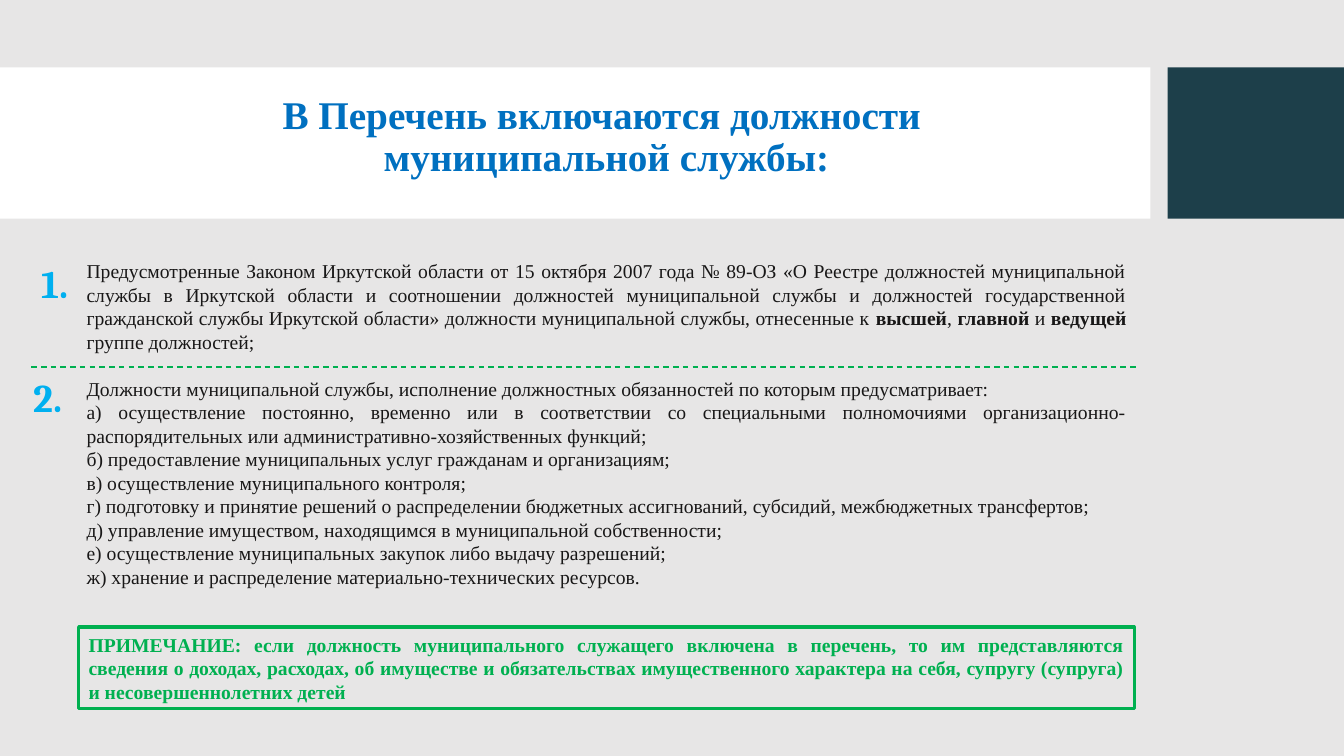
from dataclasses import dataclass
from typing import Optional

import pptx
import pptx.dml.color
import pptx.enum.dml
import pptx.enum.shapes
import pptx.enum.text
import pptx.oxml
import pptx.oxml.ns
import pptx.util

RGB = pptx.dml.color.RGBColor
ALIGN = pptx.enum.text.PP_ALIGN
ANCHOR = pptx.enum.text.MSO_ANCHOR
RECT = pptx.enum.shapes.MSO_SHAPE.RECTANGLE

GREY = RGB(0xE7, 0xE6, 0xE6)
WHITE = RGB(0xFF, 0xFF, 0xFF)
TEAL = RGB(0x1D, 0x3F, 0x4A)
BLUE = RGB(0x00, 0x70, 0xC0)
SKY = RGB(0x00, 0xB0, 0xF0)
GREEN = RGB(0x00, 0xB0, 0x50)
INK = RGB(0x18, 0x17, 0x17)

WIDTH = pptx.util.Inches(13.33)
HEIGHT = pptx.util.Inches(7.5)
SERIF = "Times New Roman"


@dataclass(frozen=True)
class Area:
    """Left, top, width and height in percent of the slide."""
    left: float
    top: float
    width: float
    height: float

    def emu(self) -> tuple[int, int, int, int]:
        return (across(self.left), down(self.top),
                across(self.width), down(self.height))


@dataclass(frozen=True)
class Panel:
    area: Area
    fill: Optional[RGB] = None
    line: Optional[RGB] = None


@dataclass(frozen=True)
class Style:
    size: int
    color: RGB
    font: str = SERIF
    bold: Optional[bool] = None
    align: Optional[ALIGN] = None
    spacing: Optional[float] = None


@dataclass(frozen=True)
class Label:
    area: Area
    lines: tuple[str, ...]
    style: Style
    wrap: bool = True
    anchor: ANCHOR = ANCHOR.TOP


def across(percent: float) -> int:
    return round(WIDTH * percent / 100)


def down(percent: float) -> int:
    return round(HEIGHT * percent / 100)


def add_panel(slide, panel: Panel):
    sp = slide.shapes.add_shape(RECT, *panel.area.emu())
    sp.shadow.inherit = False
    if panel.fill is None:
        sp.fill.background()
    else:
        sp.fill.solid()
        sp.fill.fore_color.rgb = panel.fill
    if panel.line is None:
        sp.line.fill.background()
    else:
        sp.line.color.rgb = panel.line
        sp.line.width = pptx.util.Pt(2.25)
    return sp


def write_text(tf, lines: tuple[str, ...], style: Style) -> None:
    for i, line in enumerate(lines):
        p = tf.paragraphs[0] if i == 0 else tf.add_paragraph()
        p.alignment = style.align
        p.line_spacing = style.spacing
        for j, part in enumerate(line.split("**")):
            for k, row in enumerate(part.split("\n")):
                if k:
                    p.add_line_break()
                r = p.add_run()
                r.text = row
                if j % 2:
                    r.font.bold = True
        p.font.name = style.font
        p.font.size = pptx.util.Pt(style.size)
        p.font.bold = style.bold
        p.font.color.rgb = style.color


def add_label(slide, label: Label):
    sp = slide.shapes.add_textbox(*label.area.emu())
    tf = sp.text_frame
    tf.word_wrap = label.wrap
    tf.vertical_anchor = label.anchor
    write_text(tf, label.lines, label.style)
    return sp


def add_divider(slide, left: float, right: float, top: float) -> None:
    line = slide.shapes.add_connector(
        pptx.enum.shapes.MSO_CONNECTOR.STRAIGHT,
        across(left), down(top), across(right), down(top))
    line.line.color.rgb = GREEN
    line.line.width = pptx.util.Pt(1)
    line.line.dash_style = pptx.enum.dml.MSO_LINE.DASH
    line._element.spPr.append(pptx.oxml.parse_xml(
        f'<a:effectLst {pptx.oxml.ns.nsdecls("a")}/>'))


BANDS = (
    Panel(Area(0, 8.93, 85.6, 20), WHITE),
    Panel(Area(86.87, 8.93, 13.13, 20), TEAL),
)
TITLE = Label(
    Area(5.7, 10.4, 78.85, 15.73),
    ("В Перечень включаются должности \nмуниципальной службы:",),
    Style(28, BLUE, bold=True, align=ALIGN.CENTER, spacing=0.9),
    anchor=ANCHOR.MIDDLE)
BODY = Label(
    Area(5.7, 33.6, 78.85, 45.33),
    (
        "Предусмотренные Законом Иркутской области от 15 октября 2007 года № 89-ОЗ "
        "«О Реестре должностей муниципальной службы в Иркутской области и соотношении "
        "должностей муниципальной службы и должностей государственной гражданской службы "
        "Иркутской области» должности муниципальной службы, отнесенные к **высшей**, "
        "**главной** и **ведущей **группе должностей;",
        "Должности муниципальной службы, исполнение должностных обязанностей "
        "по которым предусматривает:",
        "а) осуществление постоянно, временно или в соответствии со специальными "
        "полномочиями организационно-распорядительных или "
        "административно-хозяйственных функций;",
        "б) предоставление муниципальных услуг гражданам и организациям;",
        "в) осуществление муниципального контроля;",
        "г) подготовку и принятие решений о распределении бюджетных ассигнований, "
        "субсидий, межбюджетных трансфертов;",
        "д) управление имуществом, находящимся в муниципальной собственности;",
        "е) осуществление муниципальных закупок либо выдачу разрешений;",
        "ж) хранение и распределение материально-технических ресурсов.",
    ),
    Style(14, INK, align=ALIGN.JUSTIFY))
NOTE = Panel(Area(5.85, 82.93, 78.54, 10.8), line=GREEN)
NOTE_TEXT = (
    "ПРИМЕЧАНИЕ: если должность муниципального служащего включена в перечень, "
    "то им представляются сведения о доходах, расходах, об имуществе и обязательствах "
    "имущественного характера на себя, супругу (супруга) и несовершеннолетних детей")
NUMERAL = Style(28, SKY, "Cambria", True)
NUMBERS = (
    Label(Area(2.33, 33.6, 4.65, 7.6), ("1.",), NUMERAL),
    Label(Area(1.73, 48.67, 4.35, 7.6), ("2.",), NUMERAL, wrap=False),
)


def main() -> None:
    prs = pptx.Presentation()
    prs.slide_width, prs.slide_height = WIDTH, HEIGHT
    slide = prs.slides.add_slide(prs.slide_layouts[6])
    slide.background.fill.solid()
    slide.background.fill.fore_color.rgb = GREY
    for band in BANDS:
        add_panel(slide, band)
    add_label(slide, TITLE)
    body = add_label(slide, BODY)
    body.text_frame.paragraphs[1].space_before = pptx.util.Pt(16.8)
    note = add_panel(slide, NOTE)
    note.text_frame.word_wrap = True
    write_text(note.text_frame, (NOTE_TEXT,),
               Style(14, GREEN, bold=True, align=ALIGN.JUSTIFY))
    for number in NUMBERS:
        add_label(slide, number)
    add_divider(slide, 2.33, 84.62, 48.53)
    prs.save("out.pptx")


if __name__ == "__main__":
    main()
